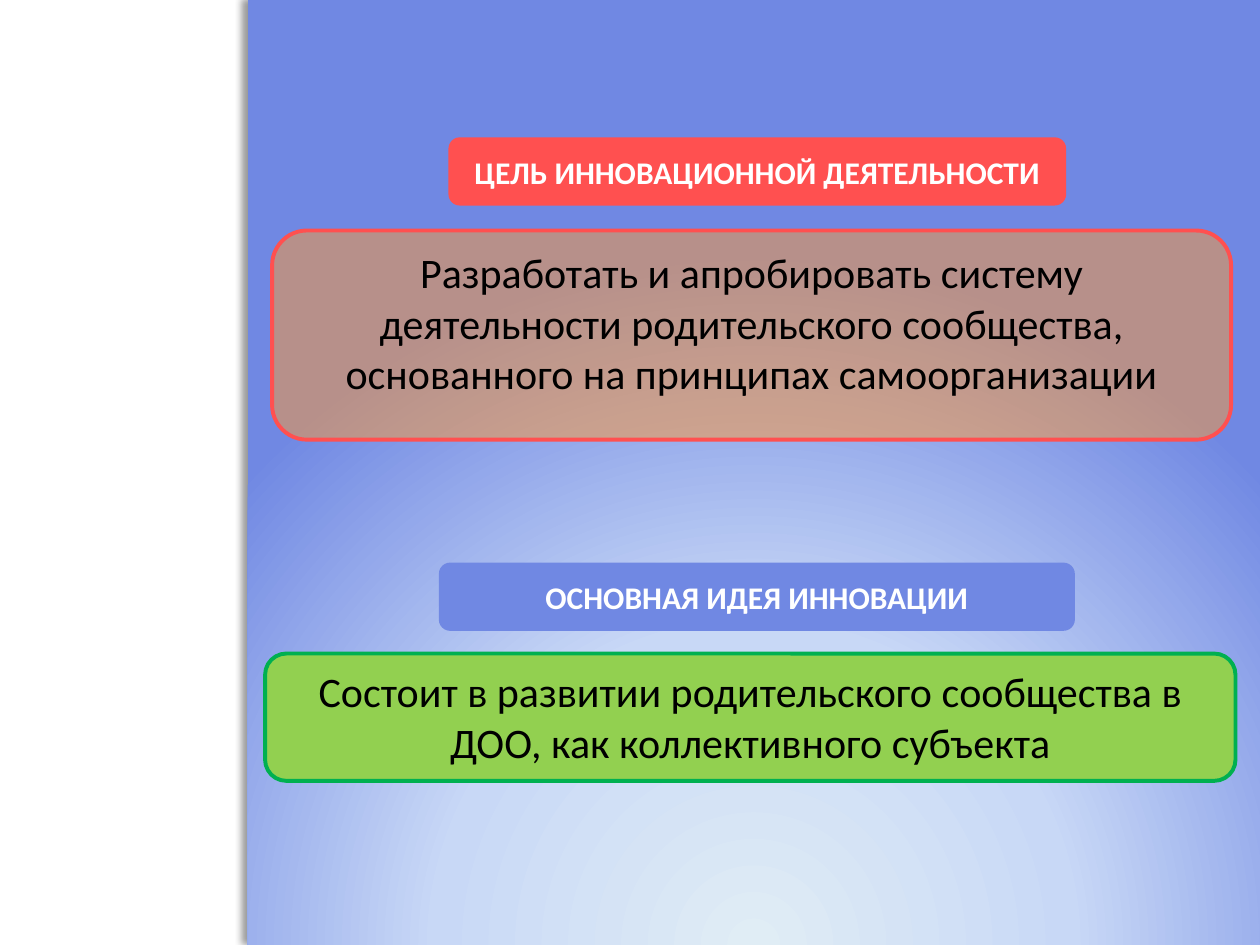
import pptx
import pptx.dml.color
import pptx.enum.shapes
import pptx.enum.text
import pptx.oxml
import pptx.oxml.ns
import pptx.util

Pt = pptx.util.Pt
RGBColor = pptx.dml.color.RGBColor
ANCHOR = pptx.enum.text.MSO_ANCHOR
SHAPE = pptx.enum.shapes.MSO_SHAPE
qn = pptx.oxml.ns.qn

BLUE = RGBColor(0x70, 0x88, 0xE3)
RED = RGBColor(0xFF, 0x50, 0x50)
ORANGE = RGBColor(0xFF, 0x99, 0x33)
LIME = RGBColor(0x92, 0xD0, 0x50)
GREEN = RGBColor(0x00, 0xB0, 0x50)
WHITE = RGBColor(0xFF, 0xFF, 0xFF)
BLACK = RGBColor(0x00, 0x00, 0x00)
PANEL_STOPS = [
    (0, RGBColor(0xE0, 0xED, 0xF5)),
    (46, RGBColor(0xC8, 0xD8, 0xF6)),
    (100, BLUE),
]
NAMESPACE = pptx.oxml.ns.nsdecls("a")


def add_plain_shape(shapes, kind, box):
    shape = shapes.add_shape(kind, *[Pt(length) for length in box])
    shape.shadow.inherit = False
    shape.line.fill.background()
    return shape


def add_panel(shapes, box):
    """Add the background panel with a radial gradient and a shadow to the left."""
    panel = add_plain_shape(shapes, SHAPE.RECTANGLE, box)
    panel.fill.gradient()
    properties = panel._element.spPr
    stops = "".join(
        f'<a:gs pos="{position * 1000}"><a:srgbClr val="{color}"/></a:gs>'
        for position, color in PANEL_STOPS
    )
    gradient = pptx.oxml.parse_xml(
        f'<a:gradFill {NAMESPACE} rotWithShape="1"><a:gsLst>{stops}</a:gsLst>'
        '<a:path path="circle"><a:fillToRect l="50000" t="130000" r="50000" b="-30000"/>'
        "</a:path></a:gradFill>"
    )
    properties.replace(properties.find(qn("a:gradFill")), gradient)
    shadow = pptx.oxml.parse_xml(
        f'<a:outerShdw {NAMESPACE} blurRad="{Pt(4)}" dist="{Pt(3)}" dir="10800000" '
        f'algn="r" rotWithShape="0"><a:srgbClr val="{BLACK}"><a:alpha val="40000"/>'
        "</a:srgbClr></a:outerShdw>"
    )
    properties.find(qn("a:effectLst")).append(shadow)


def add_rounded_box(shapes, box, text, fill, size, color, bold, anchor):
    shape = add_plain_shape(shapes, SHAPE.ROUNDED_RECTANGLE, box)
    shape.fill.solid()
    shape.fill.fore_color.rgb = fill
    text_frame = shape.text_frame
    text_frame.text = text
    text_frame.word_wrap = True
    text_frame.vertical_anchor = anchor
    paragraph = text_frame.paragraphs[0]
    paragraph.alignment = pptx.enum.text.PP_ALIGN.CENTER
    font = paragraph.runs[0].font
    font.name = "Calibri"
    font.size = Pt(size)
    font.bold = bold
    font.color.rgb = color
    return shape


def add_heading(shapes, box, text, fill):
    add_rounded_box(shapes, box, text, fill, 18, WHITE, True, ANCHOR.MIDDLE)


def add_statement(shapes, box, text, fill, outline, opacity=100):
    shape = add_rounded_box(shapes, box, text, fill, 24, BLACK, False, ANCHOR.TOP)
    shape.line.color.rgb = outline
    shape.line.width = Pt(2.25)
    if opacity < 100:
        color = shape._element.spPr.find(qn("a:solidFill"))[0]
        color.append(
            pptx.oxml.parse_xml(f'<a:alpha {NAMESPACE} val="{opacity * 1000}"/>')
        )


def main():
    presentation = pptx.Presentation()
    presentation.slide_width = Pt(720)
    presentation.slide_height = Pt(540)
    slide = presentation.slides.add_slide(presentation.slide_layouts[6])
    shapes = slide.shapes

    # Background
    add_panel(shapes, (141.5, 0, 578.5, 540))

    # Goal
    goal = shapes.add_group_shape().shapes
    add_statement(
        goal,
        (155.5, 131.75, 548, 119.5),
        "Разработать и апробировать систему деятельности родительского "
        "сообщества, основанного на принципах самоорганизации",
        ORANGE,
        RED,
        opacity=50,
    )
    add_heading(goal, (256.25, 78.5, 353, 39), "ЦЕЛЬ ИННОВАЦИОННОЙ ДЕЯТЕЛЬНОСТИ", RED)

    # Main idea
    add_heading(shapes, (250.75, 321.5, 363.5, 39), "ОСНОВНАЯ ИДЕЯ ИННОВАЦИИ", BLUE)
    add_statement(
        shapes,
        (151.5, 373.5, 554.5, 72.75),
        "Состоит в развитии родительского сообщества в ДОО, "
        "как коллективного субъекта",
        LIME,
        GREEN,
    )

    presentation.save("out.pptx")


if __name__ == "__main__":
    main()
